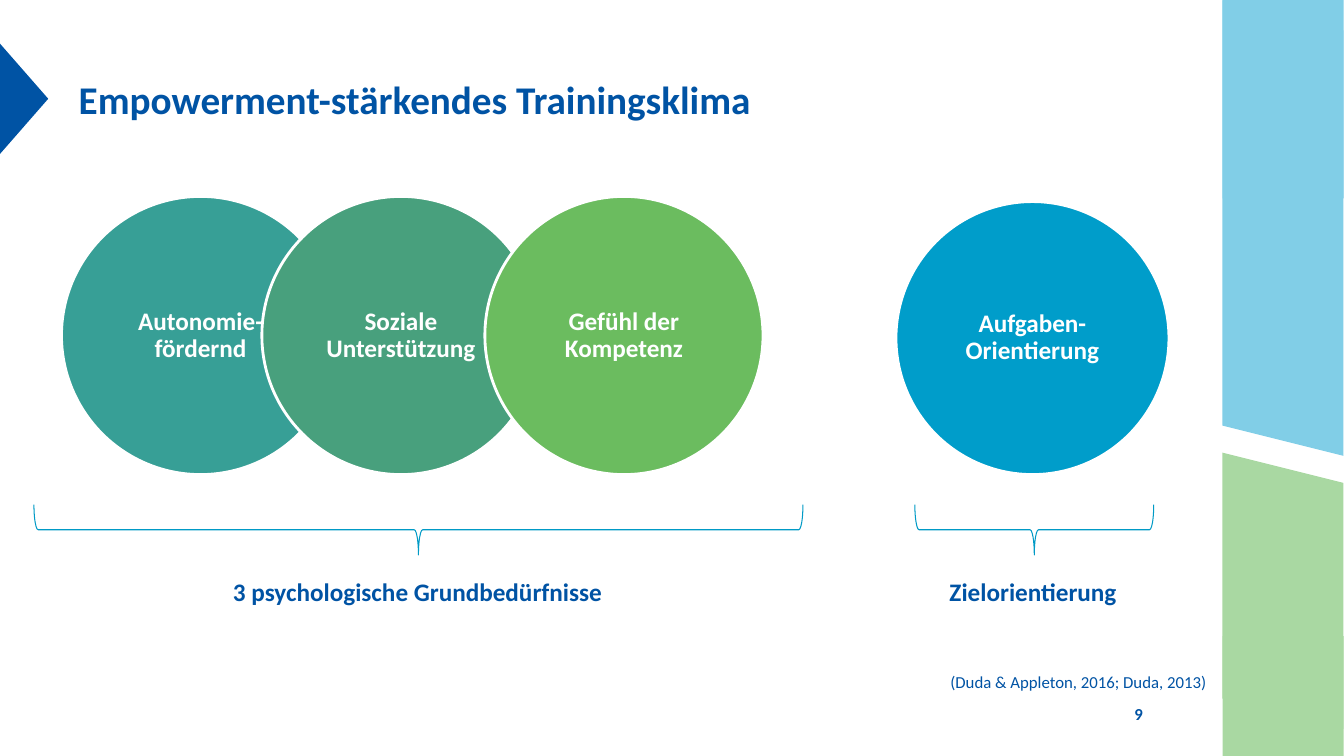
from pptx import Presentation
from pptx import util as u
from pptx.dml.color import RGBColor
from pptx.enum import shapes, text

NAVY = RGBColor(0x00, 0x53, 0xA4)
WHITE = RGBColor(0xFF, 0xFF, 0xFF)
TEAL = RGBColor(0x37, 0x9F, 0x96)
SEA_GREEN = RGBColor(0x48, 0xA0, 0x7D)
LEAF_GREEN = RGBColor(0x6B, 0xBC, 0x5F)
BLUE = RGBColor(0x00, 0x9D, 0xCA)
BRACE_BLUE = RGBColor(0x00, 0x9A, 0xC6)
PALE_BLUE = RGBColor(0x81, 0xCE, 0xE7)
PALE_GREEN = RGBColor(0xA9, 0xD8, 0xA2)

SHAPE = shapes.MSO_SHAPE
ALIGN = text.PP_ALIGN
ANCHOR = text.MSO_ANCHOR


class SlideBuilder:
    """Holds the text style and the current slide; positions are in cm."""

    style = {"name": "Calibri", "size": u.Pt(18), "bold": True}

    def __init__(self, presentation):
        self.slide = presentation.slides.add_slide(presentation.slide_layouts[5])

    def set_text(self, shape, wording, align, anchor, color=NAVY, **changes):
        frame = shape.text_frame
        frame.word_wrap = True
        frame.vertical_anchor = anchor
        paragraph = frame.paragraphs[0]
        paragraph.text = wording
        paragraph.alignment = align
        for name, value in {**self.style, **changes}.items():
            setattr(paragraph.font, name, value)
        paragraph.font.color.rgb = color
        return paragraph

    def title(self, wording, *box):
        shape = self.slide.shapes.title
        for name, value in zip(("left", "top", "width", "height"), box):
            setattr(shape, name, u.Cm(value))
        self.set_text(shape, wording, ALIGN.LEFT, ANCHOR.MIDDLE, size=u.Pt(28))

    def label(self, wording, *box, align=ALIGN.CENTER, anchor=ANCHOR.TOP, **changes):
        shape = self.slide.shapes.add_textbox(*map(u.Cm, box))
        self.set_text(shape, wording, align, anchor, **changes)

    def shape(self, kind, fill, *box, rotation=0):
        shape = self.slide.shapes.add_shape(kind, *map(u.Cm, box))
        shape.shadow.inherit = False
        shape.rotation = rotation
        if fill is None:
            shape.fill.background()
        else:
            shape.fill.solid()
            shape.fill.fore_color.rgb = fill
        shape.line.fill.background()
        return shape

    def outline(self, shape, color, width):
        shape.line.color.rgb = color
        shape.line.width = u.Pt(width)

    def circle(self, wording, fill, left, top, diameter):
        shape = self.shape(SHAPE.OVAL, fill, left, top, diameter, diameter)
        self.outline(shape, WHITE, 2)
        frame = shape.text_frame
        frame.margin_left = frame.margin_right = u.Cm(0.38)
        frame.margin_top = frame.margin_bottom = u.Cm(0.13)
        paragraph = self.set_text(shape, wording, ALIGN.CENTER, ANCHOR.MIDDLE, WHITE)
        paragraph.line_spacing = 0.9

    def brace(self, *box):
        shape = self.shape(SHAPE.RIGHT_BRACE, None, *box, rotation=90)
        self.outline(shape, BRACE_BLUE, 0.75)


def main():
    presentation = Presentation()
    presentation.slide_width = u.Cm(33.87)
    presentation.slide_height = u.Cm(19.05)
    builder = SlideBuilder(presentation)

    # Side panels and title marker
    builder.shape(SHAPE.RECTANGLE, PALE_GREEN, 30.81, 16.03, 3.05, 3.02)
    builder.shape(SHAPE.PARALLELOGRAM, PALE_GREEN, 28.85, 13.36, 6.96, 3.05, rotation=270)
    builder.shape(SHAPE.ISOSCELES_TRIANGLE, NAVY, -0.79, 1.88, 2.79, 1.22, rotation=90)
    builder.shape(SHAPE.PARALLELOGRAM, PALE_BLUE, 26.59, 4.22, 11.48, 3.05, rotation=270)
    builder.shape(SHAPE.RECTANGLE, PALE_BLUE, 30.81, 0, 3.05, 5)

    # Title and page number
    builder.title("Empowerment-stärkendes Trainingsklima", 1.73, 1.09, 27.33, 2.79)
    builder.label("9", 27.2, 17.53, 1.85, 0.89,
                  align=ALIGN.RIGHT, anchor=ANCHOR.MIDDLE, size=u.Pt(12))

    # Overlapping needs and the separate goal
    for wording, fill, left in (
        ("Autonomie-fördernd", TEAL, 1.55),
        ("Soziale Unterstützung", SEA_GREEN, 6.6),
        ("Gefühl der Kompetenz", LEAF_GREEN, 12.22),
    ):
        builder.circle(wording, fill, left, 4.95, 7.01)
    builder.circle("Aufgaben-Orientierung", BLUE, 22.58, 5.08, 6.88)

    # Braces with captions
    builder.brace(9.91, 3.66, 1.27, 19.38)
    builder.label("3 psychologische Grundbedürfnisse", 5.05, 14.4, 10.95, 1.02)
    builder.brace(25.43, 10.34, 1.27, 6.02)
    builder.label("Zielorientierung", 21.87, 14.4, 8.33, 1.02)

    # Citation
    builder.label("(Duda & Appleton, 2016; Duda, 2013)", 23.7, 16.81, 7.9, 0.76,
                  align=ALIGN.LEFT, size=u.Pt(12), bold=False)

    presentation.save("out.pptx")


if __name__ == "__main__":
    main()
